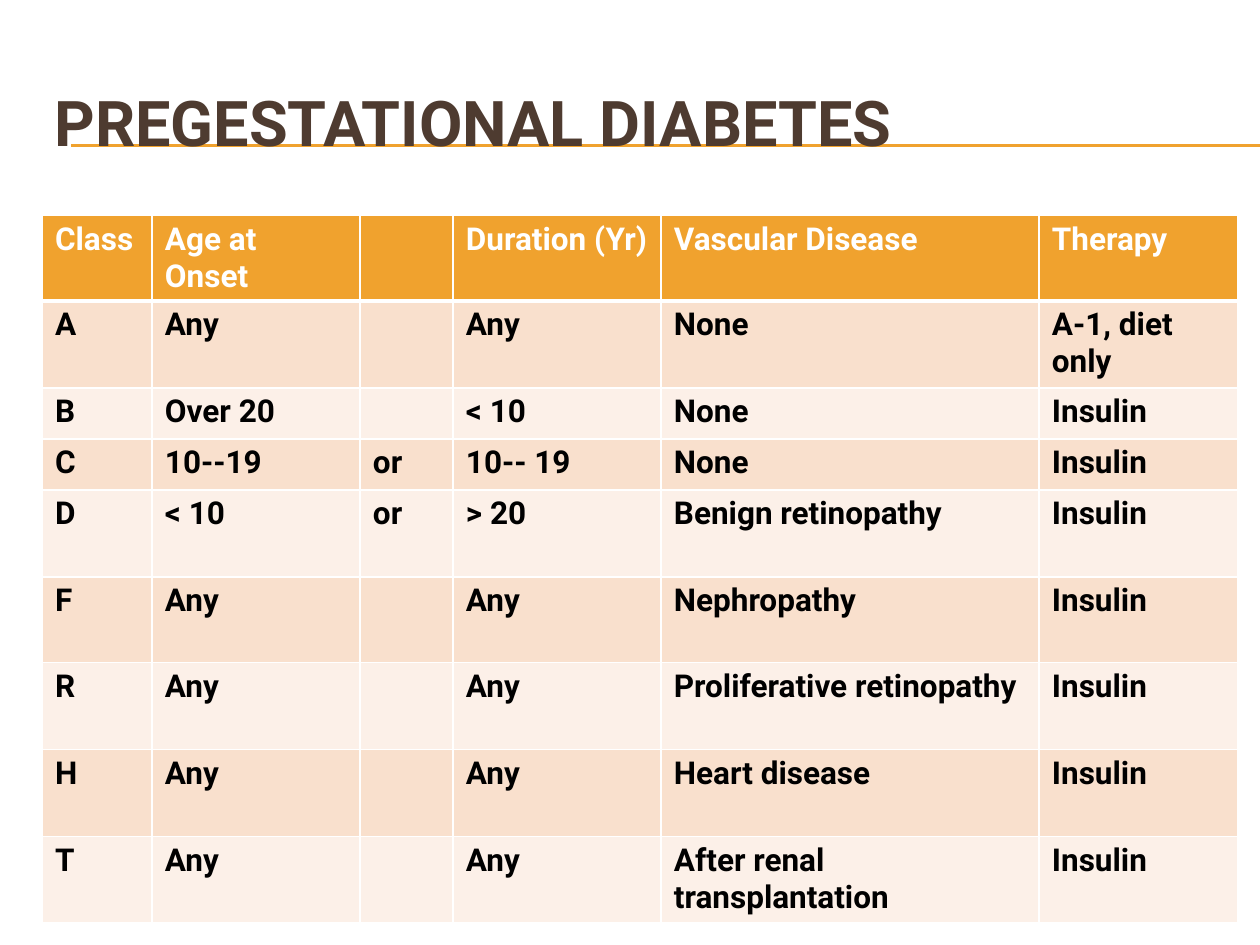
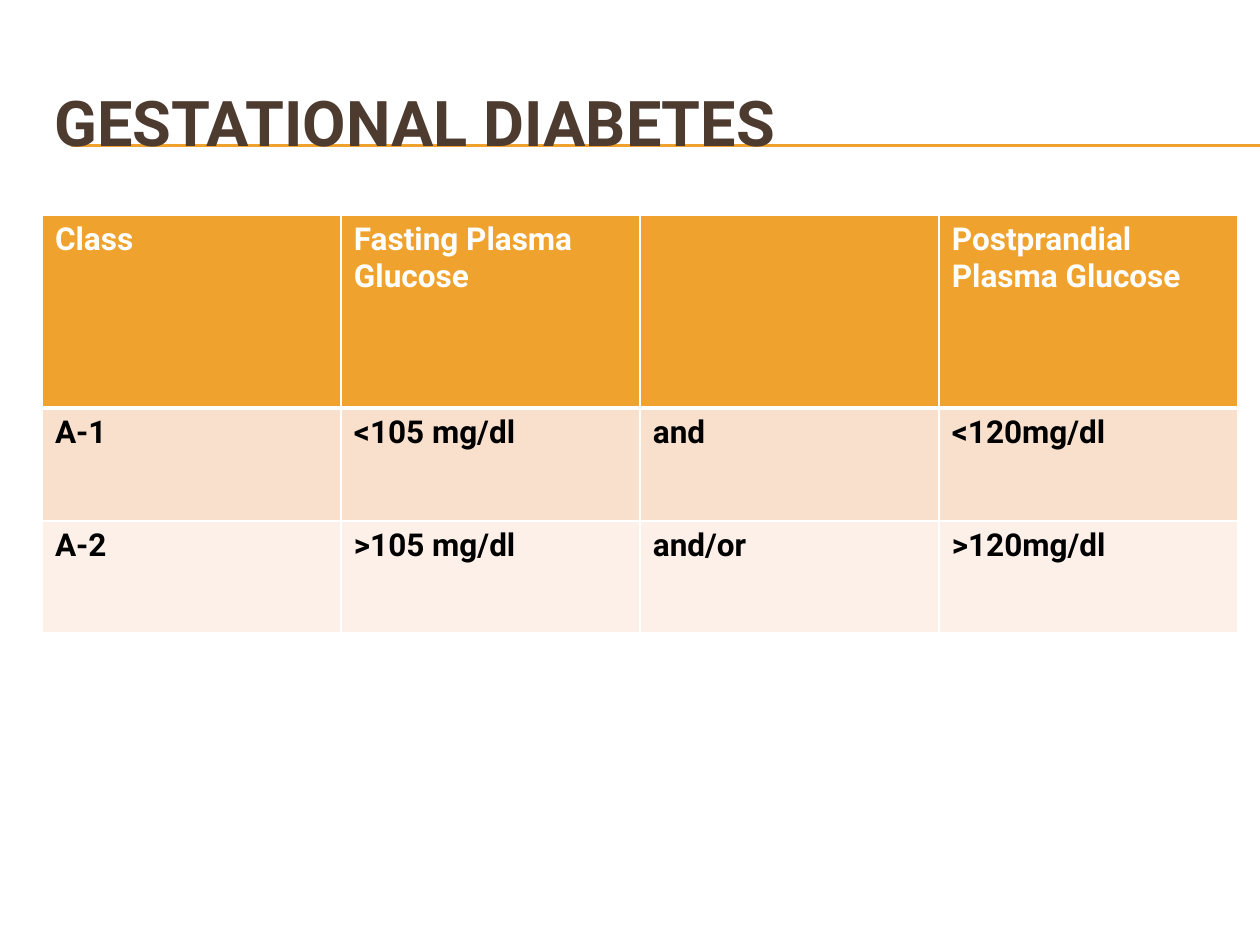
from dataclasses import dataclass

from lxml import etree
from pptx import Presentation
from pptx.dml.color import RGBColor
from pptx.enum.shapes import MSO_CONNECTOR
from pptx.enum.text import MSO_ANCHOR, MSO_AUTO_SIZE, PP_ALIGN
from pptx.oxml.ns import qn
from pptx.util import Pt

STRAIGHT = MSO_CONNECTOR.STRAIGHT
MIDDLE = MSO_ANCHOR.MIDDLE
LEFT = PP_ALIGN.LEFT
NO_AUTOFIT = MSO_AUTO_SIZE.NONE
PX = 914400 / 126


@dataclass(frozen=True)
class Theme:
    font: str = "Roboto"
    title_size: int = 36
    table_size: int = 18
    title: str = "4E3B30"
    accent: str = "F0A22E"
    header_text: str = "FFFFFF"
    body_text: str = "000000"
    bands: tuple = ("F9E0CD", "FCF0E8")
    border: str = "FFFFFF"
    rule_width: float = 0.75
    thin: int = 1
    thick: int = 3


THEME = Theme()


def px(length):
    return round(length * PX)


def style(paragraph, size, color):
    font = paragraph.font
    font.name, font.size, font.bold = THEME.font, Pt(size), True
    font.color.rgb = RGBColor.from_string(color)


# Content: title, column widths, row heights, table rows
SLIDES = [
    (
        "PREGESTATIONAL DIABETES",
        [110, 208, 93, 208, 378, 199],
        [85, 87, 51, 51, 87, 86, 87, 87, 86],
        [
            ["Class", "Age at Onset", "", "Duration (Yr)", "Vascular Disease", "Therapy"],
            ["A", "Any", "", "Any", "None", "A-1, diet only"],
            ["B", "Over 20", "", "< 10", "None", "Insulin"],
            ["C", "10--19", "or", "10-- 19", "None", "Insulin"],
            ["D", "< 10", "or", "> 20", "Benign retinopathy", "Insulin"],
            ["F", "Any", "", "Any", "Nephropathy", "Insulin"],
            ["R", "Any", "", "Any", "Proliferative retinopathy", "Insulin"],
            ["H", "Any", "", "Any", "Heart disease", "Insulin"],
            ["T", "Any", "", "Any", "After renal transplantation", "Insulin"],
        ],
    ),
    (
        "GESTATIONAL DIABETES",
        [299] * 4,
        [193, 113, 112],
        [
            ["Class", "Fasting Plasma Glucose", "", "Postprandial Plasma Glucose"],
            ["A-1", "<105 mg/dl", "and", "<120mg/dl"],
            ["A-2", ">105 mg/dl", "and/or", ">120mg/dl"],
        ],
    ),
]

deck = Presentation()
deck.slide_width, deck.slide_height = px(1260), px(945)
title_only = deck.slide_layouts[5]

for heading, widths, heights, rows in SLIDES:
    page = deck.slides.add_slide(title_only)

    # Title
    title = page.shapes.title
    title.left, title.top, title.width, title.height = px(42), px(63), px(1197), px(116)
    frame = title.text_frame
    frame.text = heading
    frame.vertical_anchor, frame.auto_size, frame.word_wrap = MIDDLE, NO_AUTOFIT, True
    frame.paragraphs[0].alignment = LEFT
    style(frame.paragraphs[0], THEME.title_size, THEME.title)

    # Double rule behind the title
    for y in (145, 146):
        rule = page.shapes.add_connector(STRAIGHT, px(71), px(y), px(1260), px(y))
        rule.line.color.rgb = RGBColor.from_string(THEME.accent)
        rule.line.width = Pt(THEME.rule_width)
        etree.SubElement(rule._element.spPr, qn("a:effectLst"))
        title._element.addprevious(rule._element)

    # Table grid
    table = page.shapes.add_table(
        len(rows), len(widths), px(42), px(215), px(sum(widths)), px(sum(heights))
    ).table
    for column, width in zip(table.columns, widths):
        column.width = px(width)
    for row, height in zip(table.rows, heights):
        row.height = px(height)

    # Table cells
    for r, texts in enumerate(rows):
        header = r == 0
        fill = THEME.accent if header else THEME.bands[(r - 1) % 2]
        color = THEME.header_text if header else THEME.body_text
        top = THEME.thick if r == 1 else THEME.thin
        bottom = THEME.thick if header else THEME.thin
        borders = {"lnL": THEME.thin, "lnR": THEME.thin, "lnT": top, "lnB": bottom}
        for c, text in enumerate(texts):
            cell = table.cell(r, c)
            cell.text = text
            cell.margin_left = cell.margin_right = px(13)
            cell.margin_top = cell.margin_bottom = px(6)
            style(cell.text_frame.paragraphs[0], THEME.table_size, color)
            properties = cell._tc.get_or_add_tcPr()
            for side, width in borders.items():
                line = etree.SubElement(properties, qn(f"a:{side}"), w=str(Pt(width)))
                solid = etree.SubElement(line, qn("a:solidFill"))
                etree.SubElement(solid, qn("a:srgbClr"), val=THEME.border)
            cell.fill.solid()
            cell.fill.fore_color.rgb = RGBColor.from_string(fill)

deck.save("out.pptx")
